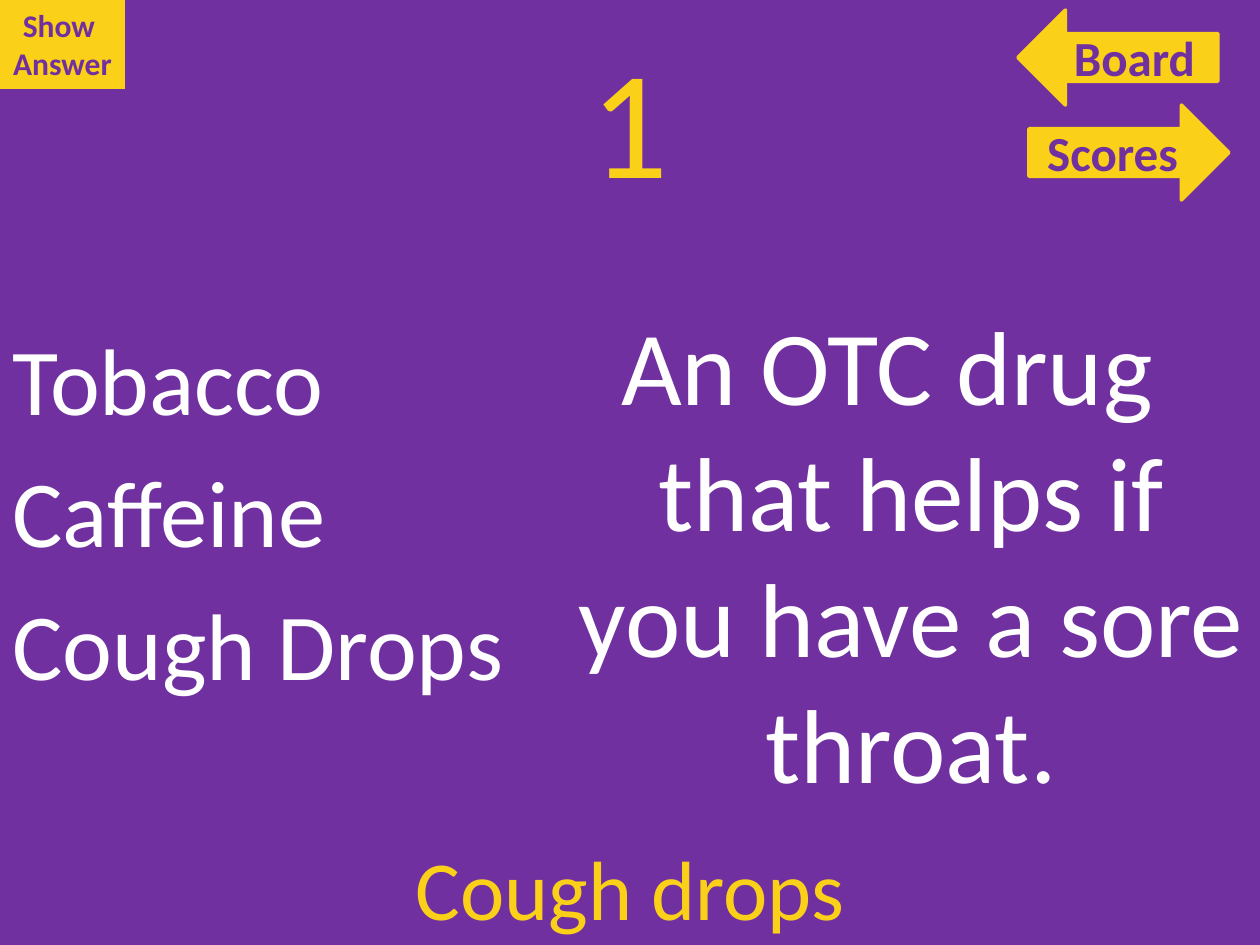
from pptx import Presentation
from pptx.dml.color import RGBColor
from pptx.enum.shapes import MSO_SHAPE
from pptx.enum.text import MSO_ANCHOR, PP_ALIGN
from pptx.util import Pt

SCALE = 914400 / 126
PURPLE, GOLD, WHITE = "7030A0", "FBD019", "FFFFFF"


def px(num):
    return round(num * SCALE)


def color(code):
    return RGBColor.from_string(code)


class Board:
    font = "Calibri"

    def __init__(self, deck):
        self.slide = deck.slides.add_slide(deck.slide_layouts[6])
        fill = self.slide.background.fill
        fill.solid()
        fill.fore_color.rgb = color(PURPLE)

    def label(self, shape, lines, size, tint, bold=False, center=True,
              hang=0, gap=0, wrap=True, anchor=MSO_ANCHOR.TOP):
        frame = shape.text_frame
        frame.word_wrap = wrap
        frame.vertical_anchor = anchor
        frame.text = "\n".join(lines)
        style = {"name": self.font, "size": Pt(size), "bold": bold}
        for para in frame.paragraphs:
            para.alignment = PP_ALIGN.CENTER if center else PP_ALIGN.LEFT
            para.space_before = Pt(gap * size)
            if hang:
                props = para._p.get_or_add_pPr()
                props.set("marL", str(px(hang)))
                props.set("indent", str(-px(hang)))
            for run in para.runs:
                for key, value in style.items():
                    setattr(run.font, key, value)
                run.font.color.rgb = color(tint)

    def text(self, box, lines, size, tint, **look):
        shape = self.slide.shapes.add_textbox(*map(px, box))
        self.label(shape, lines, size, tint, **look)

    def shape(self, kind, box, edge=0):
        shape = self.slide.shapes.add_shape(kind, *map(px, box))
        shape.shadow.inherit = False
        shape.fill.solid()
        shape.fill.fore_color.rgb = color(GOLD)
        if edge:
            shape.line.color.rgb = color(GOLD)
            shape.line.width = Pt(edge)
        else:
            shape.line.fill.background()
        return shape


def main():
    deck = Presentation()
    deck.slide_width, deck.slide_height = px(1260), px(945)
    board = Board(deck)

    # Question number and answer
    board.text((63, 38, 1134, 157), ["1"], 88, GOLD, anchor=MSO_ANCHOR.MIDDLE)
    board.text((63, 830, 1134, 115), ["Cough drops"], 48, GOLD)

    # Answer button
    button = board.shape(MSO_SHAPE.RECTANGLE, (0, 0, 125, 89))
    board.label(button, ["Show ", "Answer"], 18, PURPLE, bold=True, wrap=False)

    # Navigation arrows with their labels
    links = [
        ("Board", MSO_SHAPE.LEFT_ARROW, 1018, 10, 1040),
        ("Scores", MSO_SHAPE.RIGHT_ARROW, 1029, 105, 1018),
    ]
    for name, kind, left, top, start in links:
        board.shape(kind, (left, top, 200, 95), edge=2)
        board.text((start, top + 11, 189, 73), [name], 28, PURPLE, bold=True)

    # Choices and clue
    body = {"hang": 48, "gap": 0.2}
    board.text((0, 315, 546, 577), ["Tobacco", "Caffeine", "Cough Drops"],
               54, WHITE, center=False, **body)
    board.text((514, 294, 746, 609),
               ["An OTC drug that helps if you have a sore throat."],
               60, WHITE, **body)

    deck.save("out.pptx")


if __name__ == "__main__":
    main()
